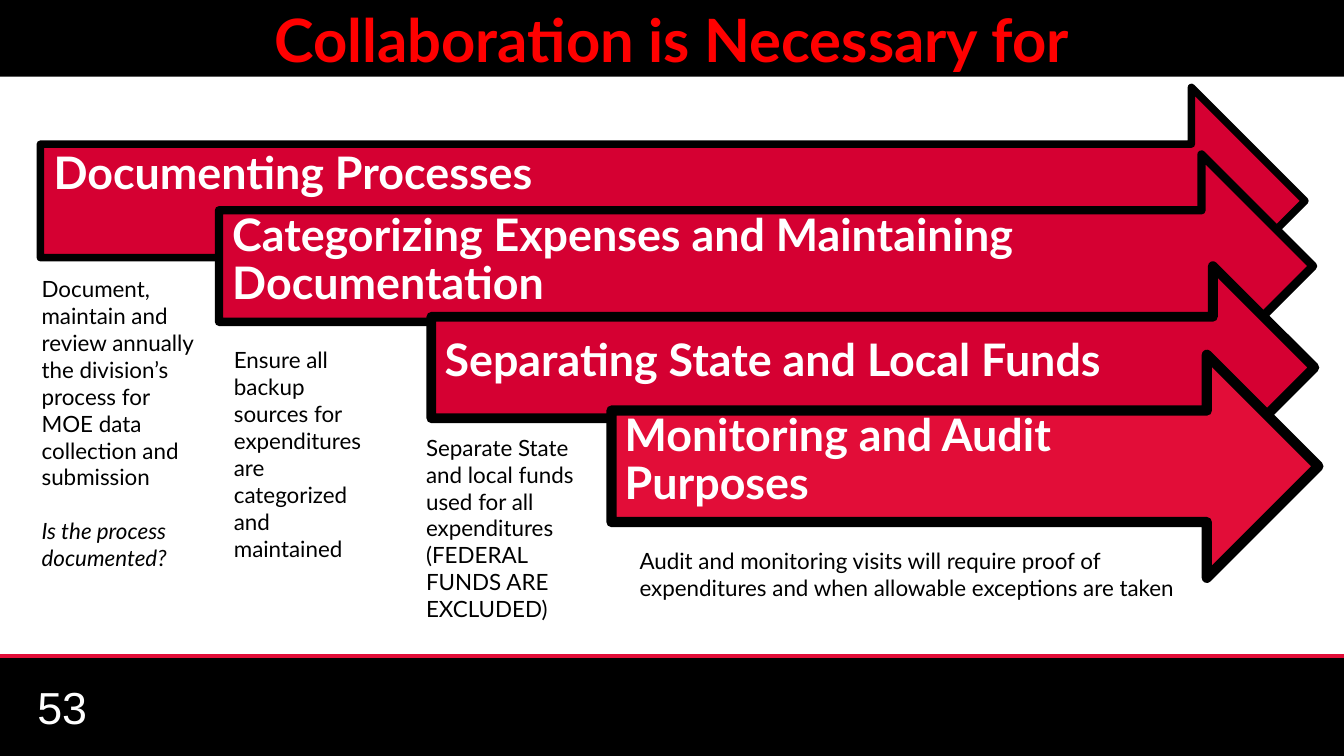
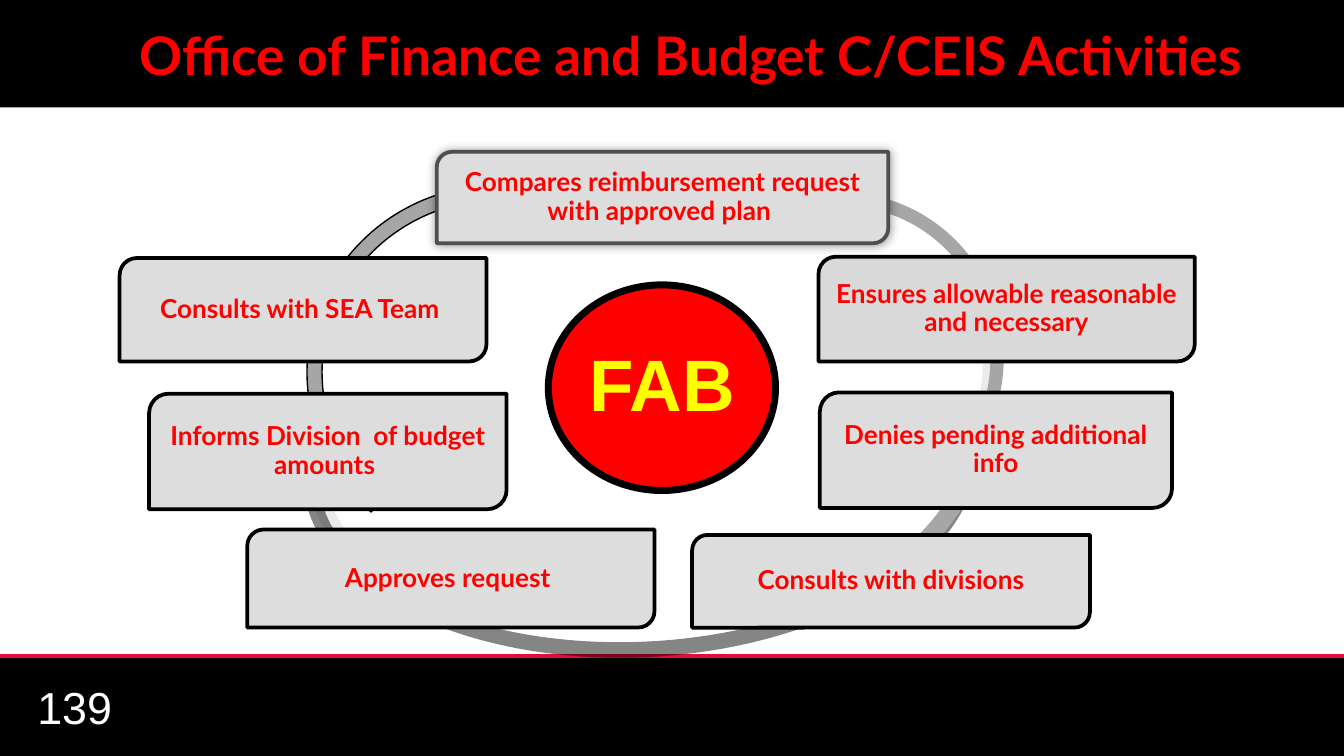
from dataclasses import dataclass
from typing import NamedTuple, Optional

from lxml.etree import SubElement
from pptx import Presentation
from pptx.dml.color import RGBColor
from pptx.enum.shapes import MSO_CONNECTOR, MSO_SHAPE
from pptx.enum.text import MSO_ANCHOR as ANCHOR, MSO_AUTO_SIZE, PP_ALIGN as ALIGN
from pptx.oxml.ns import qn
from pptx.shapes.autoshape import Shape
from pptx.slide import Slide
from pptx.text.text import TextFrame
from pptx.util import Pt

EMU_PER_PX = 9144  # 100 px to the inch
FONT = "Lato"
NUMBER_FONT = "Arial"
COLORS = {
    "black": "000000", "white": "FFFFFF", "red": "FF0000", "yellow": "FFFF00",
    "crimson": "D50032", "rule": "E20D38", "box": "DDDDDD", "box_dim": "D9D9D9",
    "box_edge": "4F4F51", "arc": "A6A6A6", "arc_light": "EBEBEB",
}


class Box(NamedTuple):
    left: int
    top: int
    width: int
    height: int


class Insets(NamedTuple):
    left: int
    top: int
    right: int
    bottom: int


@dataclass
class Style:
    size: float
    color: str = "black"
    bold: bool = False
    italic: bool = False
    font: str = FONT
    align: ALIGN = ALIGN.LEFT
    spacing: Optional[float] = None


@dataclass
class Arrow:
    text: str
    box: Box
    line: float
    fill: str = "crimson"
    insets: Insets = Insets(10, 0, 28, 8)
    anchor: ANCHOR = ANCHOR.MIDDLE


@dataclass
class Note:
    box: Box
    text: str
    question: str = ""


@dataclass
class Arc:
    box: Box
    start: float
    end: float
    fill: str
    rotation: int = 0
    flip: bool = False
    line: float = 0
    opacity: int = 100


@dataclass
class Activity:
    text: str
    box: Box
    fill: str = "box"
    edge: str = "black"
    shadow: bool = False


ARROW_TEXT = Style(24, "white", bold=True, spacing=0.9)
NOTE_TEXT = Style(12)
QUESTION_TEXT = Style(12, italic=True)
ACTIVITY_TEXT = Style(14, "red", bold=True, align=ALIGN.CENTER, spacing=0.9)
HUB_TEXT = Style(39, "yellow", bold=True, font=NUMBER_FONT, align=ALIGN.CENTER, spacing=0.9)
NUMBER_TEXT = Style(24, "white", font=NUMBER_FONT)

STEPS = [
    (Arrow("Documenting Processes", Box(30, 65, 941, 169), 4,
           insets=Insets(10, 5, 28, 8), anchor=ANCHOR.TOP),
     Note(Box(26, 200, 127, 255),
          "Document, maintain and review annually the division’s process for MOE data "
          "collection and submission", "Is the process documented?")),
    (Arrow("Categorizing Expenses and Maintaining Documentation", Box(163, 115, 814, 166), 4.5),
     Note(Box(169, 253, 108, 174),
          "Ensure all backup sources for expenditures are categorized and maintained")),
    (Arrow("Separating State and Local Funds", Box(321, 198, 657, 151), 5.25),
     Note(Box(312, 318, 125, 152),
          "Separate State and local funds used for all expenditures (FEDERAL FUNDS ARE EXCLUDED)")),
]
LAST_ARROW = Arrow("Monitoring and Audit Purposes", Box(455, 264, 526, 166), 5.5, "rule")
AUDIT_BOX = Box(466, 402, 438, 50)
AUDIT_TEXT = ("Audit and monitoring visits will require proof of expenditures "
              "and when allowable exceptions are taken")

ARCS = [
    Arc(Box(232, 134, 279, 286), 112.7, 190.49, "arc", rotation=90, flip=True, line=0.75),
    Arc(Box(263, 115, 316, 316), 89.75, 114.06, "arc_light", rotation=90),
    Arc(Box(219, 154, 315, 316), 66.54, 96.66, "arc_light"),
    Arc(Box(225, 201, 503, 288), 0.22, 108.22, "black", rotation=357, opacity=48),
    Arc(Box(424, 136, 316, 316), 8.94, 37.32, "arc"),
    Arc(Box(424, 109, 320, 316), 206.72, 14.69, "arc_light"),
    Arc(Box(498, 142, 248, 253), 136.6, 208.97, "arc", rotation=37),
]
HUB_BOX = Box(408, 212, 169, 153)
ACTIVITIES = [
    Activity("Compares reimbursement request with approved plan ", Box(325, 113, 336, 68),
             edge="box_edge", shadow=True),
    Activity("Ensures allowable reasonable and necessary", Box(609, 191, 280, 78), "box_dim"),
    Activity("Denies pending additional info", Box(610, 292, 262, 86)),
    Activity("Consults with divisions", Box(515, 398, 296, 69)),
    Activity("Approves request ", Box(184, 394, 303, 73)),
    Activity("Informs Division  of budget amounts ", Box(111, 293, 266, 86)),
    Activity("Consults with SEA Team ", Box(89, 192, 273, 77)),
]


def px(n: int) -> int:
    return n * EMU_PER_PX


def rgb(name: str) -> RGBColor:
    return RGBColor.from_string(COLORS[name])


def add_run(tf: TextFrame, text: str, style: Style, first: bool = True,
            before: float = 0) -> None:
    """Write one paragraph, reusing the frame's empty one when it is the first."""
    p = tf.paragraphs[0] if first else tf.add_paragraph()
    p.alignment = style.align
    if style.spacing:
        p.line_spacing = style.spacing
    if before:
        p.space_before = Pt(before)
    r = p.add_run()
    r.text = text
    r.font.name = style.font
    r.font.size = Pt(style.size)
    r.font.bold = style.bold
    r.font.italic = style.italic
    r.font.color.rgb = rgb(style.color)


def set_frame(tf: TextFrame, insets: Insets, anchor: ANCHOR) -> None:
    tf.word_wrap = True
    tf.auto_size = MSO_AUTO_SIZE.NONE
    tf.vertical_anchor = anchor
    tf.margin_left, tf.margin_top, tf.margin_right, tf.margin_bottom = map(px, insets)


def add_shape(s: Slide, kind: MSO_SHAPE, box: Box, fill: str,
              line: float = 0, edge: str = "black") -> Shape:
    sp = s.shapes.add_shape(kind, *map(px, box))
    sp.shadow.inherit = False
    sp.fill.solid()
    sp.fill.fore_color.rgb = rgb(fill)
    if line:
        sp.line.color.rgb = rgb(edge)
        sp.line.width = Pt(line)
    else:
        sp.line.fill.background()
    return sp


def add_text(s: Slide, box: Box, text: str, style: Style, anchor: ANCHOR) -> None:
    tf = s.shapes.add_textbox(*map(px, box)).text_frame
    set_frame(tf, Insets(10, 5, 10, 5), anchor)
    add_run(tf, text, style)


def add_slide(prs: Presentation, title: str, box: Box, size: float, number: str) -> Slide:
    """Add a slide with the footer band, red rule, slide number and title band."""
    s = prs.slides.add_slide(prs.slide_layouts[5])
    add_shape(s, MSO_SHAPE.RECTANGLE, Box(-28, 488, 1056, 75), "black")
    rule = s.shapes.add_connector(MSO_CONNECTOR.STRAIGHT, px(-29), px(488), px(1028), px(488))
    rule.line.color.rgb = rgb("rule")
    rule.line.width = Pt(2)
    SubElement(rule._element.spPr, qn("a:effectLst"))
    add_text(s, Box(18, 501, 233, 50), number, NUMBER_TEXT, ANCHOR.MIDDLE)

    sp = s.shapes.title
    sp.left, sp.top, sp.width, sp.height = map(px, box)
    sp.fill.solid()
    sp.fill.fore_color.rgb = rgb("black")
    set_frame(sp.text_frame, Insets(50, 0, 50, 0), ANCHOR.MIDDLE)
    add_run(sp.text_frame, title, Style(size, "red", bold=True, align=ALIGN.CENTER))
    return s


def add_arrow(s: Slide, arrow: Arrow) -> None:
    sp = add_shape(s, MSO_SHAPE.RIGHT_ARROW, arrow.box, arrow.fill, arrow.line)
    set_frame(sp.text_frame, arrow.insets, arrow.anchor)
    add_run(sp.text_frame, arrow.text, ARROW_TEXT)


def add_note(s: Slide, note: Note) -> None:
    tf = add_shape(s, MSO_SHAPE.RECTANGLE, note.box, "white").text_frame
    set_frame(tf, Insets(5, 5, 5, 5), ANCHOR.TOP)
    add_run(tf, note.text, NOTE_TEXT)
    if note.question:
        add_run(tf, note.question, QUESTION_TEXT, first=False, before=14.4)


def add_arc(s: Slide, arc: Arc) -> None:
    sp = add_shape(s, MSO_SHAPE.BLOCK_ARC, arc.box, arc.fill, arc.line)
    for i, value in enumerate((arc.start, arc.end, 0.04)):
        sp.adjustments[i] = value
    sp.rotation = arc.rotation
    if arc.flip:
        sp._element.spPr.find(qn("a:xfrm")).set("flipV", "1")
    if arc.opacity < 100:
        color = sp._element.spPr.find(qn("a:solidFill")).find(qn("a:srgbClr"))
        SubElement(color, qn("a:alpha"), val=str(arc.opacity * 1000))


def add_soft_shadow(sp: Shape) -> None:
    effects = sp._element.spPr.find(qn("a:effectLst"))
    shadow = SubElement(effects, qn("a:outerShdw"), blurRad=str(px(7)), dist="0")
    color = SubElement(shadow, qn("a:srgbClr"), val=COLORS["black"])
    SubElement(color, qn("a:alpha"), val="40000")


def add_activity(s: Slide, activity: Activity) -> None:
    sp = add_shape(s, MSO_SHAPE.ROUND_2_DIAG_RECTANGLE, activity.box, activity.fill,
                   2, activity.edge)
    if activity.shadow:
        add_soft_shadow(sp)
    set_frame(sp.text_frame, Insets(2, 2, 2, 2), ANCHOR.MIDDLE)
    add_run(sp.text_frame, activity.text, ACTIVITY_TEXT)


def build_collaboration(prs: Presentation) -> None:
    s = add_slide(prs, "Collaboration is Necessary for", Box(0, 0, 1000, 57), 32, "53")
    for arrow, note in STEPS:
        add_arrow(s, arrow)
        add_note(s, note)
    add_arrow(s, LAST_ARROW)
    add_text(s, AUDIT_BOX, AUDIT_TEXT, NOTE_TEXT, ANCHOR.TOP)


def build_activities(prs: Presentation) -> None:
    s = add_slide(prs, "Office of Finance and Budget C/CEIS Activities",
                  Box(0, 0, 1028, 80), 28.5, "139")
    for arc in ARCS:
        add_arc(s, arc)
    hub = add_shape(s, MSO_SHAPE.OVAL, HUB_BOX, "red", 3.75)
    set_frame(hub.text_frame, Insets(5, 5, 5, 5), ANCHOR.MIDDLE)
    add_run(hub.text_frame, "FAB", HUB_TEXT)
    for activity in ACTIVITIES:
        add_activity(s, activity)


def main() -> None:
    prs = Presentation()
    prs.slide_width = px(1000)
    prs.slide_height = px(1000) * 9 // 16
    build_collaboration(prs)
    build_activities(prs)
    prs.save("out.pptx")


if __name__ == "__main__":
    main()
